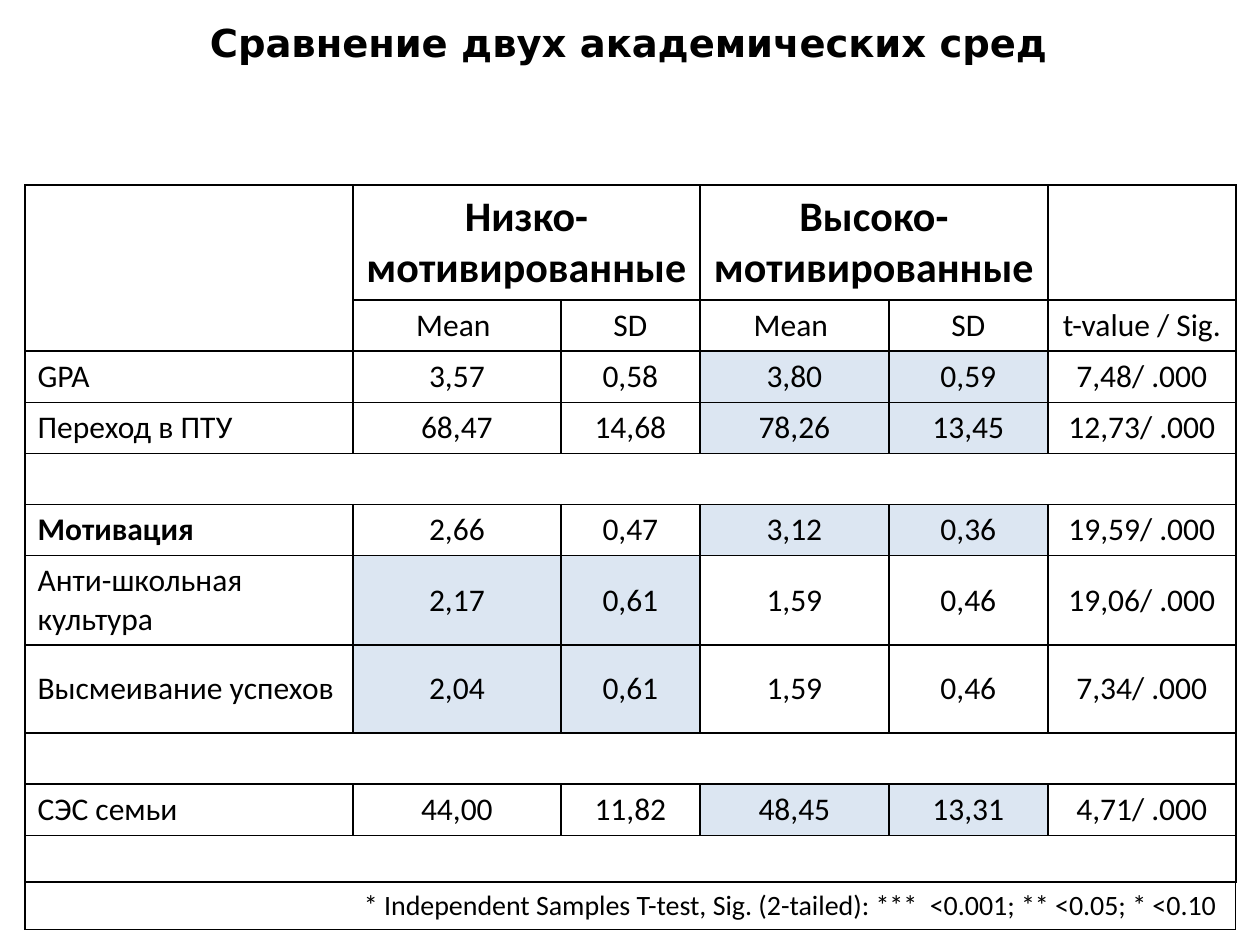
from dataclasses import dataclass
from typing import Optional

from lxml.etree import SubElement
from pptx import Presentation
from pptx.dml.color import RGBColor
from pptx.enum.text import MSO_ANCHOR as Anchor, MSO_AUTO_SIZE as AutoSize, PP_ALIGN as Align
from pptx.oxml.ns import qn
from pptx.util import Emu, Pt

PX = 914400 // 126


@dataclass(frozen=True)
class Theme:
    ink: str = "000000"
    highlight: str = "DCE6F2"
    table_font: str = "Calibri"
    title_font: str = "DejaVu Sans"
    title_size: int = 22
    group_size: int = 24
    body_size: int = 18
    note_size: int = 16
    border: float = 1
    note_border: float = 0.75


@dataclass(frozen=True)
class Row:
    height: int
    texts: tuple = ()
    highlighted: tuple = ()
    size: int = 18
    bold_label: bool = False


THEME = Theme()
LOW, HIGH = (1, 2), (3, 4)
COLUMNS = (328, 208, 139, 189, 159, 188)
NOTE = "* Independent Samples T-test, Sig. (2-tailed): ***  <0.001; ** <0.05; * <0.10 "
ROWS = (
    Row(115, ("", "Низко-мотивированные", "", "Высоко-мотивированные"), size=THEME.group_size),
    Row(50, ("", "Mean ", "SD", "Mean ", "SD", "t-value / Sig.")),
    Row(50, ("GPA", "3,57", "0,58", "3,80", "0,59", "7,48/ .000"), HIGH),
    Row(50, ("Переход в ПТУ", "68,47", "14,68", "78,26", "13,45", "12,73/ .000"), HIGH),
    Row(50),
    Row(50, ("Мотивация", "2,66", "0,47", "3,12", "0,36", "19,59/ .000"), HIGH, bold_label=True),
    Row(88, ("Анти-школьная культура", "2,17", "0,61", "1,59", "0,46", "19,06/ .000"), LOW),
    Row(88, ("Высмеивание успехов", "2,04", "0,61", "1,59", "0,46", "7,34/ .000"), LOW),
    Row(50),
    Row(50, ("СЭС семьи", "44,00", "11,82", "48,45", "13,31", "4,71/ .000"), HIGH),
    Row(46, size=THEME.note_size),
    Row(47, (NOTE,), size=THEME.note_size),
)
GROUP_ROW, NOTE_ROW = 0, len(ROWS) - 1


def px(value: int) -> Emu:
    return Emu(value * PX)


def write(paragraph, text: str, font_name: str, size: int, bold: bool, align: Align) -> None:
    paragraph.alignment = align
    font = paragraph.font
    font.name, font.size, font.bold = font_name, Pt(size), bold
    font.color.rgb = RGBColor.from_string(THEME.ink)
    if text:
        paragraph.add_run().text = text
    else:
        # An empty paragraph takes its line height from its end mark.
        SubElement(paragraph._p, qn("a:endParaRPr"), sz=str(size * 100))


def set_borders(cell, widths: dict) -> None:
    properties = cell._tc.get_or_add_tcPr()
    for side, width in widths.items():
        line = SubElement(properties, qn(f"a:ln{side}"), w=str(Pt(width)))
        fill = SubElement(line, qn("a:solidFill"))
        SubElement(fill, qn("a:srgbClr"), val=THEME.ink)


def set_fill(cell, color: Optional[str]) -> None:
    if color:
        cell.fill.solid()
        cell.fill.fore_color.rgb = RGBColor.from_string(color)
    else:
        cell.fill.background()


def add_title(slide, text: str) -> None:
    shape = slide.shapes.add_textbox(px(23), px(13), px(1211), px(59))
    frame = shape.text_frame
    frame.word_wrap = True
    frame.auto_size = AutoSize.SHAPE_TO_FIT_TEXT
    write(frame.paragraphs[0], text, THEME.title_font, THEME.title_size, True, Align.CENTER)


def alignment_of(row: int, column: int) -> Align:
    if row == NOTE_ROW:
        return Align.RIGHT
    return Align.CENTER if column else Align.LEFT


def add_comparison_table(slide) -> None:
    height = sum(row.height for row in ROWS)
    shape = slide.shapes.add_table(len(ROWS), len(COLUMNS), px(25), px(185), px(sum(COLUMNS)), px(height))
    table = shape.table
    table.first_row = table.horz_banding = False
    for column, width in zip(table.columns, COLUMNS):
        column.width = px(width)

    for r, row in enumerate(ROWS):
        table.rows[r].height = px(row.height)
        outer = THEME.note_border if r == NOTE_ROW else THEME.border
        for c in range(len(COLUMNS)):
            cell = table.cell(r, c)
            text = row.texts[c] if c < len(row.texts) else ""
            bold = r == GROUP_ROW or (row.bold_label and c == 0)
            size = row.size if text or r != GROUP_ROW else THEME.body_size
            is_sig_heading = (r, c) == (1, len(COLUMNS) - 1)
            cell.vertical_anchor = Anchor.TOP if is_sig_heading else Anchor.MIDDLE
            write(cell.text_frame.paragraphs[0], text, THEME.table_font, size, bold, alignment_of(r, c))
            set_borders(cell, {"L": outer, "R": outer, "T": THEME.border, "B": outer})
            set_fill(cell, THEME.highlight if c in row.highlighted else None)
        if len(row.texts) < 2:
            table.cell(r, 0).merge(table.cell(r, len(COLUMNS) - 1))

    table.cell(0, 0).merge(table.cell(1, 0))
    for first, last in (LOW, HIGH):
        table.cell(GROUP_ROW, first).merge(table.cell(GROUP_ROW, last))


def main() -> None:
    presentation = Presentation()
    presentation.slide_width, presentation.slide_height = px(1260), px(945)
    slide = presentation.slides.add_slide(presentation.slide_layouts[6])
    add_comparison_table(slide)
    add_title(slide, "Сравнение двух академических сред")
    presentation.save("out.pptx")


if __name__ == "__main__":
    main()
